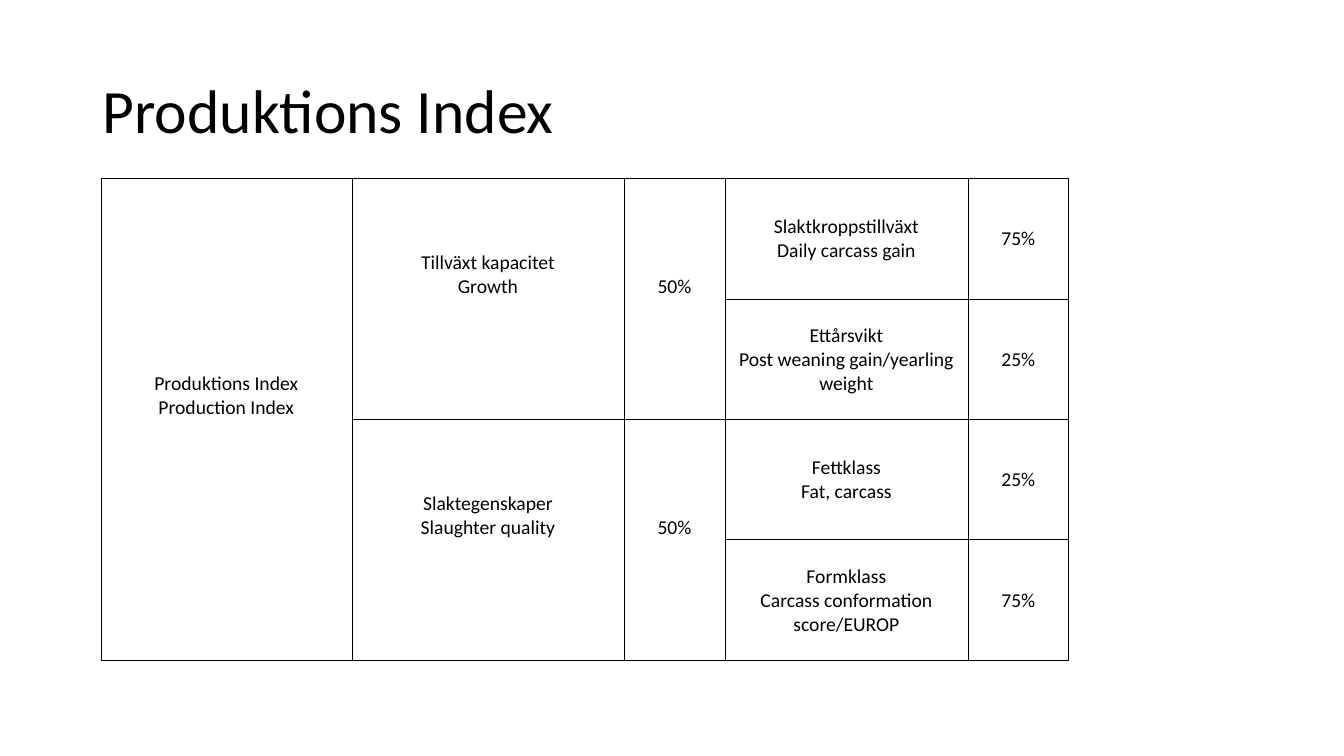
from lxml import etree
from pptx import Presentation
from pptx.dml.color import RGBColor
from pptx.enum.text import MSO_ANCHOR, PP_ALIGN
from pptx.oxml.ns import qn
from pptx.util import Inches, Pt

MIDDLE = MSO_ANCHOR.MIDDLE
BOTTOM = MSO_ANCHOR.BOTTOM
CENTER = PP_ALIGN.CENTER
BLACK = RGBColor(0, 0, 0)
FONT = "Calibri"
BORDER_WIDTH = Pt(0.5)
ROW_COUNT = 4

# width, rows per group, one text per group
INDEX_COLUMNS = [
    (2.49, 4, ["Produktions Index\nProduction Index"]),
    (2.7, 2, ["Tillväxt kapacitet\nGrowth", "Slaktegenskaper\nSlaughter quality"]),
    (1, 2, ["50%", "50%"]),
    (2.41, 1, [
        "Slaktkroppstillväxt\nDaily carcass gain",
        "Ettårsvikt\nPost weaning gain/yearling weight",
        "Fettklass\nFat, carcass",
        "Formklass\nCarcass conformation score/EUROP",
    ]),
    (1, 1, ["75%", "25%", "25%", "75%"]),
]


def style_paragraph(paragraph, size):
    paragraph.font.name = FONT
    paragraph.font.size = Pt(size)
    paragraph.font.color.rgb = BLACK


def add_title(slide, left, top, width, height):
    title = slide.shapes.add_textbox(Inches(left), Inches(top), Inches(width), Inches(height))
    title.text_frame.word_wrap = True
    title.text_frame.vertical_anchor = MIDDLE
    paragraph = title.text_frame.paragraphs[0]
    paragraph.text = "Produktions Index"
    paragraph.line_spacing = 0.9
    style_paragraph(paragraph, 44)


def set_borders(cell, visible_sides):
    properties = cell._tc.get_or_add_tcPr()
    for side in "LRTB":
        line = etree.SubElement(properties, qn(f"a:ln{side}"), w=str(BORDER_WIDTH))
        if side in visible_sides:
            fill = etree.SubElement(line, qn("a:solidFill"))
            etree.SubElement(fill, qn("a:srgbClr"), val=str(BLACK))
        else:
            etree.SubElement(line, qn("a:noFill"))


def fill_cell(cell, text, anchor):
    cell.margin_left = cell.margin_right = cell.margin_top = Inches(0.01)
    cell.margin_bottom = 0
    cell.vertical_anchor = anchor
    cell.text = text
    for paragraph in cell.text_frame.paragraphs:
        paragraph.alignment = CENTER
        style_paragraph(paragraph, 14)


def add_index_table(slide, left, top, width, height):
    frame = slide.shapes.add_table(
        ROW_COUNT, len(INDEX_COLUMNS),
        Inches(left), Inches(top), Inches(width), Inches(height),
    )
    table = frame.table
    table.first_row = False
    table.horz_banding = False
    for column, (column_width, span, texts) in enumerate(INDEX_COLUMNS):
        table.columns[column].width = Inches(column_width)
        for row in range(ROW_COUNT):
            cell = table.cell(row, column)
            group, position = divmod(row, span)
            sides = "LR"
            if position == 0:
                sides += "T"
            if position == span - 1:
                sides += "B"
            set_borders(cell, sides)
            cell.fill.background()
            if position == (span - 1) // 2:
                fill_cell(cell, texts[group], BOTTOM if span > 1 else MIDDLE)


def main():
    presentation = Presentation()
    presentation.slide_width = Inches(13.33)
    presentation.slide_height = Inches(7.5)
    slide = presentation.slides.add_slide(presentation.slide_layouts[6])
    add_title(slide, 0.92, 0.4, 11.5, 1.45)
    add_index_table(slide, 1, 1.77, 9.6, 4.78)
    presentation.save("out.pptx")


if __name__ == "__main__":
    main()
